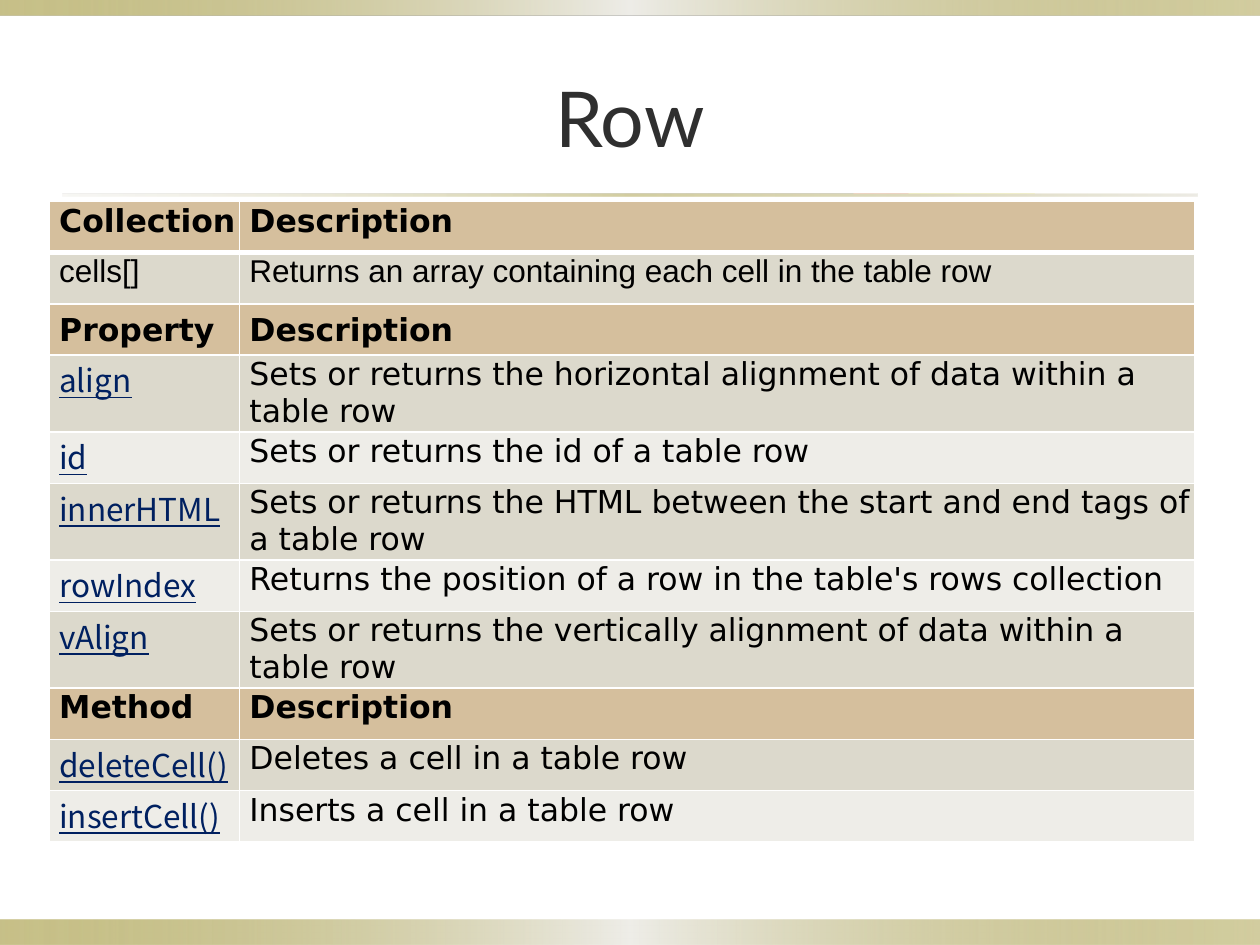
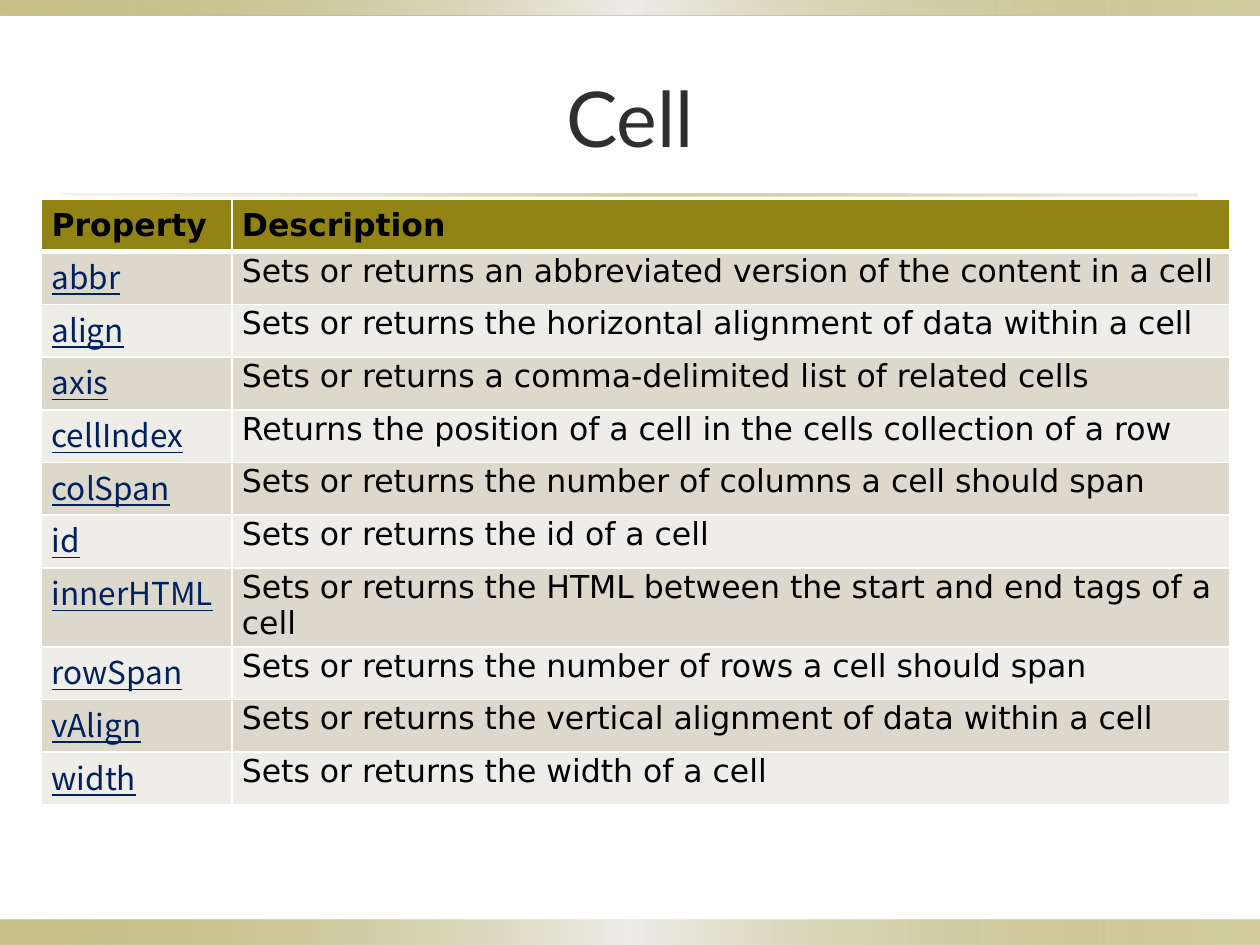
from lxml import etree
from pptx import Presentation
from pptx.dml.color import RGBColor
from pptx.enum.shapes import MSO_SHAPE
from pptx.enum.text import MSO_ANCHOR, PP_ALIGN
from pptx.oxml.ns import qn
from pptx.util import Inches, Pt

RECTANGLE = MSO_SHAPE.RECTANGLE
TOP, MIDDLE = MSO_ANCHOR.TOP, MSO_ANCHOR.MIDDLE
CENTER = PP_ALIGN.CENTER

OLIVE = RGBColor(0x91, 0x84, 0x15)
SAND = RGBColor(0xDC, 0xD9, 0xCC)
PALE = RGBColor(0xEE, 0xED, 0xE8)
TAN = RGBColor(0xD5, 0xBF, 0x9D)
CHARCOAL = RGBColor(0x2F, 0x2F, 0x2F)
NAVY = RGBColor(0x00, 0x20, 0x60)
BLACK = RGBColor(0x00, 0x00, 0x00)
WHITE = RGBColor(0xFF, 0xFF, 0xFF)

TITLE_FONT, BODY_FONT = "Lato", "DejaVu Sans"
LINK_FONT, PLAIN_FONT = "Noto Sans CJK TC", "Arial"

# Gradient stops: colour and opacity in percent, evenly spaced
BAND_STOPS = [(OLIVE, 50), (PALE, 100), (OLIVE, 40)]
RULE_STOPS = [(SAND, 20), (OLIVE, 40), (SAND, 50)]
DECORATIONS = [
    (0, 7.3, 10, 0.2, BAND_STOPS),
    (0, 0, 10, 0.12, BAND_STOPS),
    (0.5, 1.54, 9, 0.02, RULE_STOPS),
]

HEADINGS = ("Collection", "Property", "Method")
WRAPPED = ("align", "innerHTML", "vAlign")

row_entries = [
    ("Collection", "Description"),
    ("cells[]", "Returns an array containing each cell in the table row"),
    ("Property", "Description"),
    ("align", "Sets or returns the horizontal alignment of data within a table row"),
    ("id", "Sets or returns the id of a table row"),
    ("innerHTML", "Sets or returns the HTML between the start and end tags of a table row"),
    ("rowIndex", "Returns the position of a row in the table's rows collection"),
    ("vAlign", "Sets or returns the vertically alignment of data within a table row"),
    ("Method", "Description"),
    ("deleteCell()", "Deletes a cell in a table row"),
    ("insertCell()", "Inserts a cell in a table row"),
]
cell_entries = [
    ("Property", "Description"),
    ("abbr", "Sets or returns an abbreviated version of the content in a cell"),
    ("align", "Sets or returns the horizontal alignment of data within a cell"),
    ("axis", "Sets or returns a comma-delimited list of related cells"),
    ("cellIndex", "Returns the position of a cell in the cells collection of a row"),
    ("colSpan", "Sets or returns the number of columns a cell should span"),
    ("id", "Sets or returns the id of a cell"),
    ("innerHTML", "Sets or returns the HTML between the start and end tags of a cell"),
    ("rowSpan", "Sets or returns the number of rows a cell should span"),
    ("vAlign", "Sets or returns the vertical alignment of data within a cell"),
    ("width", "Sets or returns the width of a cell"),
]

# Title, entries, terms on two lines, heading fill, left, top, height, column widths
PAGES = [
    ("Row", row_entries, WRAPPED, TAN, 0.39, 1.6, 5.08, (1.51, 7.58)),
    ("Cell", cell_entries, ("innerHTML",), OLIVE, 0.33, 1.58, 4.81, (1.51, 7.92)),
]


def fill_gradient(shape, stops):
    shape.fill.gradient()
    shape.fill.gradient_angle = 0
    stop_list = shape.fill._xPr.find(qn("a:gradFill")).find(qn("a:gsLst"))
    for old_stop in list(stop_list):
        stop_list.remove(old_stop)
    for index, (color, opacity) in enumerate(stops):
        stop = etree.SubElement(stop_list, qn("a:gs"), pos=str(index * 50000))
        tint = etree.SubElement(stop, qn("a:srgbClr"), val=str(color))
        etree.SubElement(tint, qn("a:alpha"), val=str(opacity * 1000))


def add_borders(cell, top_width, bottom_width):
    properties = cell._tc.get_or_add_tcPr()
    sides = {"a:lnL": 1, "a:lnR": 1, "a:lnT": top_width, "a:lnB": bottom_width}
    for tag, width in sides.items():
        line = etree.SubElement(properties, qn(tag), w=str(Pt(width)))
        solid = etree.SubElement(line, qn("a:solidFill"))
        etree.SubElement(solid, qn("a:srgbClr"), val=str(WHITE))


deck = Presentation()
deck.slide_width, deck.slide_height = Inches(10), Inches(7.5)

for title, entries, wrapped, heading_fill, left, top, height, widths in PAGES:
    page = deck.slides.add_slide(deck.slide_layouts[6])

    # Bands and the rule under the title
    for x, y, wide, high, stops in DECORATIONS:
        band = page.shapes.add_shape(
            RECTANGLE, Inches(x), Inches(y), Inches(wide), Inches(high))
        band.shadow.inherit = False
        band.line.fill.background()
        fill_gradient(band, stops)

    # Title
    box = page.shapes.add_textbox(Inches(0.5), Inches(0.3), Inches(9), Inches(1.25))
    frame = box.text_frame
    frame.word_wrap = True
    frame.vertical_anchor = MIDDLE
    frame.text = title
    para = frame.paragraphs[0]
    para.alignment = CENTER
    para.font.name, para.font.size = TITLE_FONT, Pt(44)
    para.font.color.rgb = CHARCOAL

    # Table grid: a two-line row is half as tall again
    table = page.shapes.add_table(
        len(entries), 2, Inches(left), Inches(top),
        Inches(sum(widths)), Inches(height)).table
    table.first_row = table.horz_banding = False
    for column, width in zip(table.columns, widths):
        column.width = Inches(width)
    unit = height / (len(entries) + len(wrapped) / 2)

    # Table rows: the banding restarts below each heading
    band_index = 0
    for row_index, entry in enumerate(entries):
        term = entry[0]
        is_heading = term in HEADINGS
        table.rows[row_index].height = Inches(unit * (1.5 if term in wrapped else 1))
        if is_heading:
            row_fill, band_index = heading_fill, 0
        else:
            row_fill = (SAND, PALE)[band_index % 2]
            band_index += 1

        for column_index, text in enumerate(entry):
            cell = table.cell(row_index, column_index)
            add_borders(cell, 3 if row_index == 1 else 1, 3 if row_index == 0 else 1)
            cell.fill.solid()
            cell.fill.fore_color.rgb = row_fill
            cell.margin_left, cell.margin_bottom = Inches(0.08), 0
            cell.margin_top = cell.margin_right = Inches(0.01)
            cell.vertical_anchor = MIDDLE if term == "Property" else TOP
            cell.text_frame.text = text
            span = cell.text_frame.paragraphs[0].runs[0]
            is_link = column_index == 0 and not is_heading and term != "cells[]"
            span.font.size = Pt(18)
            span.font.bold = is_heading
            span.font.underline = is_link
            span.font.color.rgb = NAVY if is_link else BLACK
            if is_link:
                span.font.name = LINK_FONT
            else:
                span.font.name = PLAIN_FONT if term == "cells[]" else BODY_FONT

deck.save("out.pptx")
